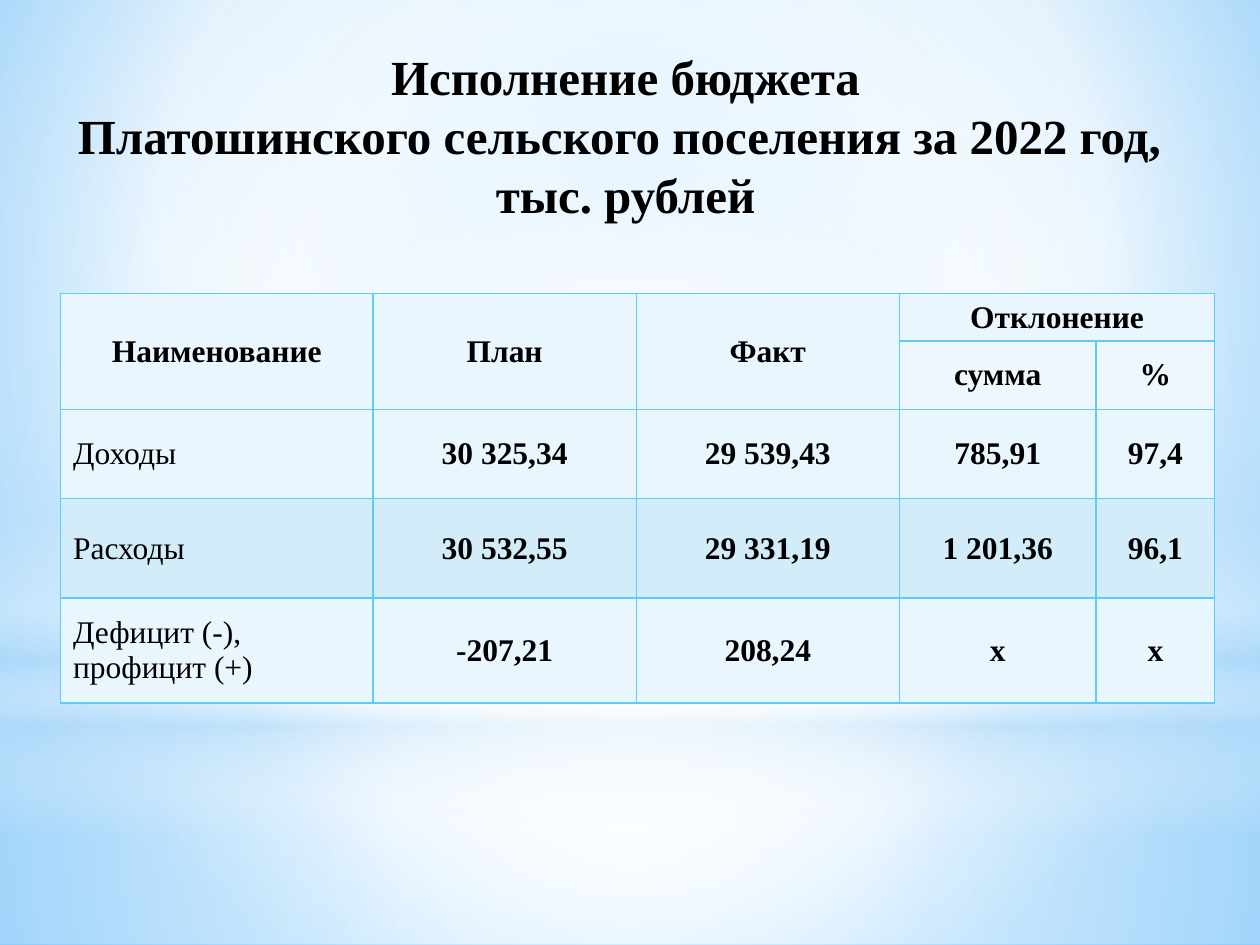
from lxml import etree
from pptx import Presentation
from pptx.dml.color import RGBColor
from pptx.enum import shapes as kinds, text as txt
from pptx.oxml.ns import qn
from pptx.util import Pt

FONT = "Times New Roman"
EDGE = "5ECCF3"
PALE, LIGHT, BAND = "EAF6FD", "EDF7FD", "D2ECFA"
HAZE = "B4DCFA"
MID = (50, 50, 50, 50)

# Top, height, shape, stops (position, colour, opacity), centre (None: linear)
GLOWS = [
    (402, 138, "RECTANGLE",
     [(0, "FFFFFF", 91), (37, "FFFFFF", 76), (100, HAZE, 79)], MID),
    (0, 402, "RECTANGLE",
     [(0, "FFFFFF", 89), (48, "FFFFFF", 62), (100, HAZE, 79)], MID),
    (296.6, 180, "RECTANGLE",
     [(0, "FFFFFF", 0), (29, "FFFFFF", 30), (45, HAZE, 40),
      (55, "FFFFFF", 26), (65, HAZE, 60), (100, "FFFFFF", 0)], None),
    (126, 402, "OVAL", [(0, "FFFFFF", 100), (56, "FFFFFF", 0)], MID),
]

COLS = [178.6, 150.4, 150.4, 112.4, 67.8]
ROWS = [27, 39, 51, 56.8, 60]
CELLS = [
    ["Наименование", "План", "Факт", "Отклонение", ""],
    ["", "", "", "сумма", "%"],
    ["Доходы", "30 325,34", "29 539,43", "785,91", "97,4"],
    ["Расходы", "30 532,55", "29 331,19", "1 201,36", "96,1"],
    ["Дефицит (-), профицит (+)", "-207,21", "208,24", "х", "х"],
]
FILLS = [PALE, LIGHT, PALE, BAND, PALE]


def rgb(code):
    return RGBColor.from_string(code)


def sub(parent, tag, **attrs):
    return etree.SubElement(parent, qn(tag),
                            {k: str(v) for k, v in attrs.items()})


def blend(fill, root, stops, focus):
    """Give a fill under root a circular gradient, or one running down."""
    fill.gradient()
    grad = next(root.iter(qn("a:gradFill")))
    grad.clear()
    group = sub(grad, "a:gsLst")
    for pos, code, alpha in stops:
        tint = sub(sub(group, "a:gs", pos=pos * 1000), "a:srgbClr", val=code)
        if alpha < 100:
            sub(tint, "a:alpha", val=alpha * 1000)
    if focus:
        ring = sub(grad, "a:path", path="circle")
        sides = {side: val * 1000 for side, val in zip("ltrb", focus)}
        sub(ring, "a:fillToRect", **sides)
    else:
        sub(grad, "a:lin", ang=90 * 60000, scaled=0)


def style(frame, size, bold, align):
    for para in frame.paragraphs:
        para.alignment = align
        font = para.font
        font.name, font.size, font.bold = FONT, Pt(size), bold
        font.color.rgb = rgb("000000")


def backdrop(slide, width):
    blend(slide.background.fill, slide.element,
          [(0, "9ED5FF", 100), (60, "FFFFFF", 100), (100, "5BB9FF", 100)],
          (20, 10, 20, 60))
    for top, height, kind, stops, focus in GLOWS:
        glow = slide.shapes.add_shape(getattr(kinds.MSO_SHAPE, kind),
                                      0, Pt(top), width, Pt(height))
        glow.shadow.inherit = False
        glow.line.fill.background()
        blend(glow.fill, glow.element, stops, focus)


def border(cell):
    props = cell._tc.get_or_add_tcPr()
    for i, tag in enumerate(("a:lnL", "a:lnR", "a:lnT", "a:lnB")):
        line = etree.Element(qn(tag), w=str(Pt(1)))
        sub(sub(line, "a:solidFill"), "a:srgbClr", val=EDGE)
        props.insert(i, line)


def budget(slide, left, top):
    frame = slide.shapes.add_table(len(ROWS), len(COLS), Pt(left), Pt(top),
                                   Pt(sum(COLS)), Pt(sum(ROWS)))
    table = frame.table
    table.first_row = table.horz_banding = False
    for col, width in zip(table.columns, COLS):
        col.width = Pt(width)
    for row, height in zip(table.rows, ROWS):
        row.height = Pt(height)
    for r, line in enumerate(CELLS):
        for c, words in enumerate(line):
            cell = table.cell(r, c)
            cell.text = words
            cell.vertical_anchor = txt.MSO_ANCHOR.MIDDLE
            cell.fill.solid()
            cell.fill.fore_color.rgb = rgb(FILLS[r])
            border(cell)
            label = r > 1 and c == 0
            side = txt.PP_ALIGN.LEFT if label else txt.PP_ALIGN.CENTER
            style(cell.text_frame, 18, not label, side)
    for c in range(3):
        table.cell(0, c).merge(table.cell(1, c))
    table.cell(0, 3).merge(table.cell(0, 4))


def heading(slide, left, top, width, height):
    title = slide.shapes.title
    title.left, title.top = Pt(left), Pt(top)
    title.width, title.height = Pt(width), Pt(height)
    frame = title.text_frame
    frame.text = ("Исполнение бюджета\v"
                  "Платошинского сельского поселения за 2022 год, \n"
                  "тыс. рублей")
    frame.word_wrap = True
    frame.auto_size = txt.MSO_AUTO_SIZE.NONE
    frame.vertical_anchor = txt.MSO_ANCHOR.MIDDLE
    style(frame, 28, True, txt.PP_ALIGN.CENTER)
    for para in frame.paragraphs:
        para.space_before = Pt(0)
    # Bring the title in front of the backdrop
    slide.shapes._spTree.append(title.element)


def main():
    deck = Presentation()
    deck.slide_width, deck.slide_height = Pt(720), Pt(540)
    slide = deck.slides.add_slide(deck.slide_layouts[5])
    backdrop(slide, deck.slide_width)
    budget(slide, 34.6, 167.8)
    heading(slide, 8.6, 23.8, 697.7, 106.6)
    deck.save("out.pptx")


if __name__ == "__main__":
    main()
